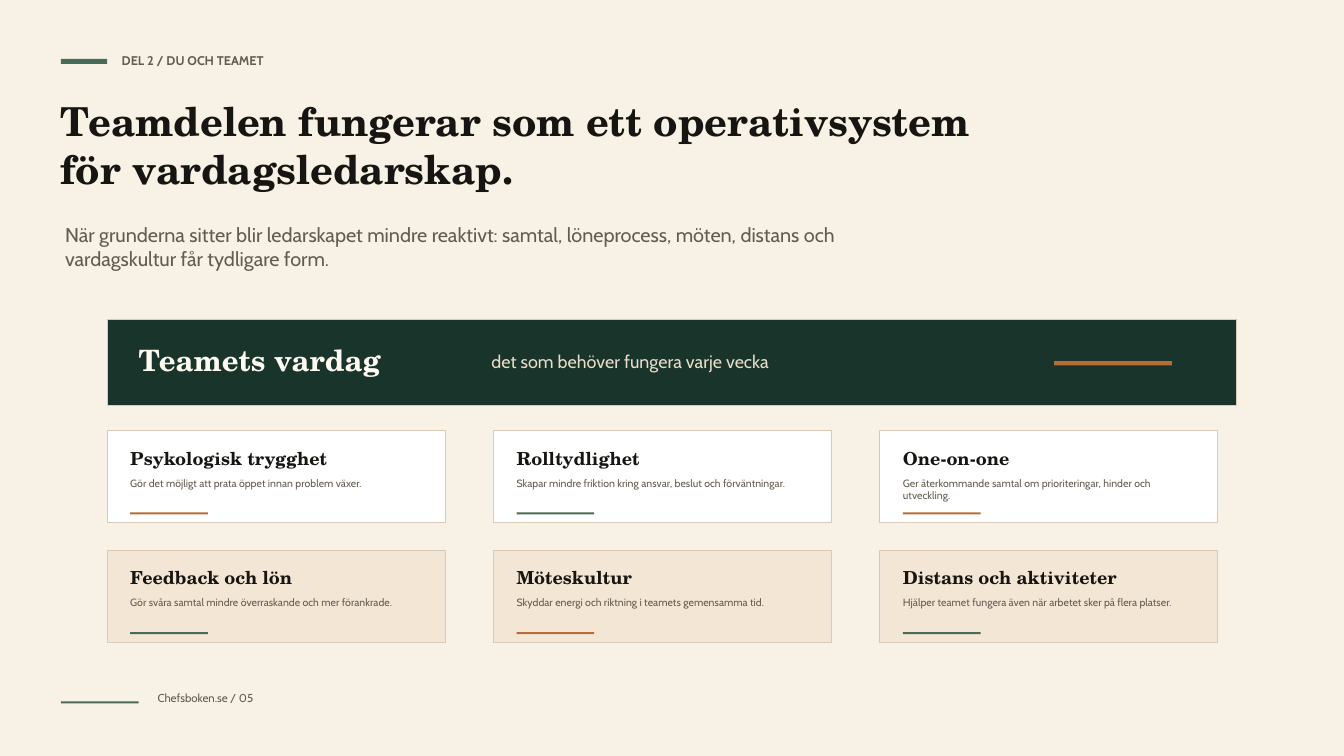
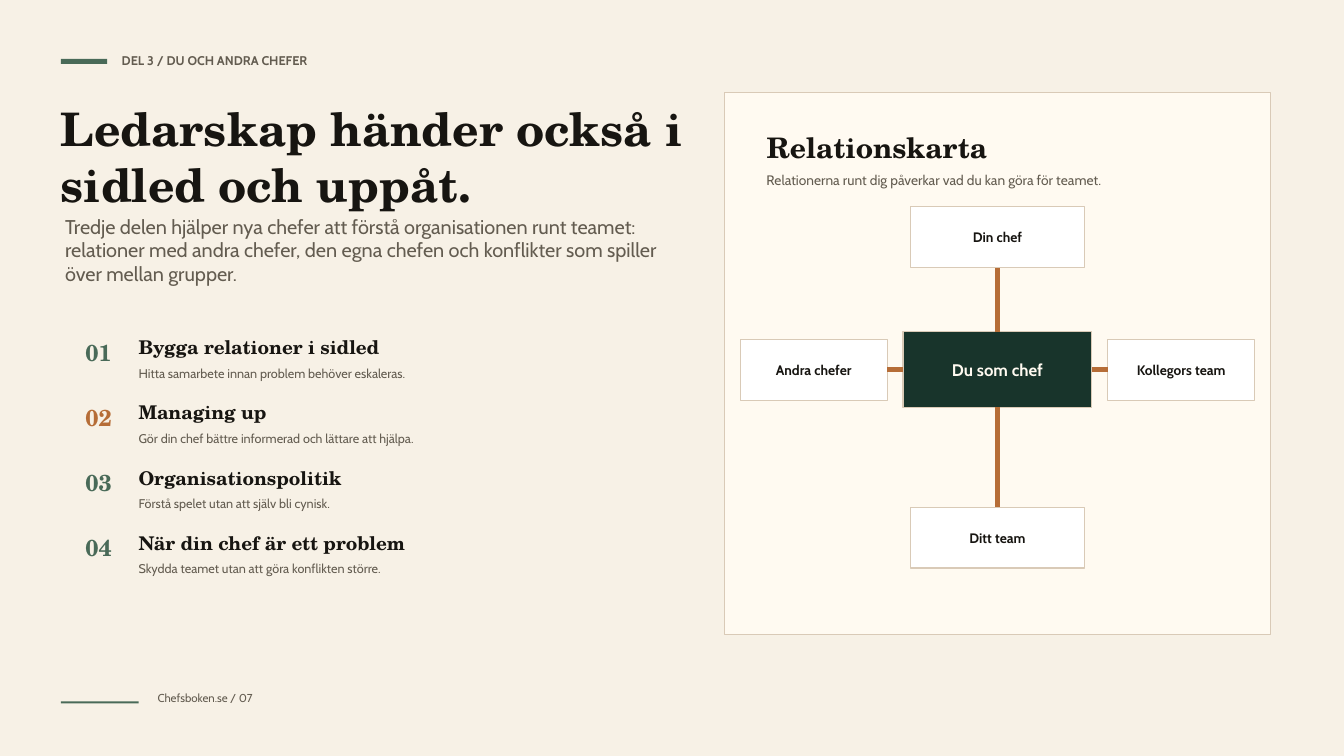
from dataclasses import dataclass

from lxml import etree
from pptx import Presentation
from pptx import slide as s
from pptx import util as u
from pptx.dml.color import RGBColor
from pptx.enum import shapes, text
from pptx.oxml import ns
from pptx.shapes import autoshape
from pptx.text import text as t

CREAM = RGBColor(0xF7, 0xF1, 0xE6)
IVORY = RGBColor(0xFF, 0xFA, 0xF1)
WHITE = RGBColor(0xFF, 0xFF, 0xFF)
SAND = RGBColor(0xF3, 0xE6, 0xD5)
LINEN = RGBColor(0xE9, 0xDC, 0xC9)
BORDER = RGBColor(0xD9, 0xCA, 0xB7)
GREEN = RGBColor(0x49, 0x6A, 0x58)
FOREST = RGBColor(0x18, 0x34, 0x2B)
COPPER = RGBColor(0xB6, 0x6D, 0x37)
INK = RGBColor(0x17, 0x15, 0x11)
MUTED = RGBColor(0x63, 0x5C, 0x50)

SERIF = "TeX Gyre Schola"
SANS = "Cabin"
COLUMNS, ROWS = 1280, 720
WIDTH, HEIGHT = u.Inches(13.33), u.Inches(7.5)
LEFT = text.PP_ALIGN.LEFT
CENTER = text.PP_ALIGN.CENTER
TOP, BOTTOM = 0, 2
WEST, EAST = 1, 3


@dataclass(frozen=True)
class Area:
    column: float
    row: float
    columns: float
    rows: float

    def moved(self, columns: float, rows: float) -> "Area":
        return Area(self.column + columns, self.row + rows, self.columns, self.rows)

    def lengths(self) -> tuple[int, int, int, int]:
        across, down = WIDTH / COLUMNS, HEIGHT / ROWS
        return (round(self.column * across), round(self.row * down),
                round(self.columns * across), round(self.rows * down))


@dataclass(frozen=True)
class Style:
    size: float
    color: RGBColor = MUTED
    font: str = SANS
    bold: bool = False


@dataclass(frozen=True)
class Header:
    section: str
    title: str
    title_size: float
    title_area: Area
    intro: str
    intro_area: Area
    number: str


@dataclass(frozen=True)
class Topic:
    heading: str
    detail: str


@dataclass(frozen=True)
class Node:
    label: str
    area: Area
    hub_side: int
    node_side: int


def heading(size: float, color: RGBColor = INK) -> Style:
    return Style(size, color, SERIF, True)


LABEL = Style(9, bold=True)
NODE_LABEL = Style(9.8, INK, bold=True)
HUB_LABEL = Style(12, IVORY, bold=True)

TEAM = Header(
    "DEL 2 / DU OCH TEAMET",
    "Teamdelen fungerar som ett operativsystem för vardagsledarskap.",
    28.5, Area(58, 92, 900, 100),
    "När grunderna sitter blir ledarskapet mindre reaktivt: samtal, löneprocess, "
    "möten, distans och vardagskultur får tydligare form.",
    Area(62, 212, 760, 54), "05")
PEERS = Header(
    "DEL 3 / DU OCH ANDRA CHEFER",
    "Ledarskap händer också i sidled och uppåt.",
    33, Area(58, 96, 720, 86),
    "Tredje delen hjälper nya chefer att förstå organisationen runt teamet: "
    "relationer med andra chefer, den egna chefen och konflikter som spiller "
    "över mellan grupper.",
    Area(62, 204, 590, 82), "07")

CARDS = (
    Topic("Psykologisk trygghet", "Gör det möjligt att prata öppet innan problem växer."),
    Topic("Rolltydlighet", "Skapar mindre friktion kring ansvar, beslut och förväntningar."),
    Topic("One-on-one", "Ger återkommande samtal om prioriteringar, hinder och utveckling."),
    Topic("Feedback och lön", "Gör svåra samtal mindre överraskande och mer förankrade."),
    Topic("Möteskultur", "Skyddar energi och riktning i teamets gemensamma tid."),
    Topic("Distans och aktiviteter", "Hjälper teamet fungera även när arbetet sker på flera platser."),
)
STEPS = (
    Topic("Bygga relationer i sidled", "Hitta samarbete innan problem behöver eskaleras."),
    Topic("Managing up", "Gör din chef bättre informerad och lättare att hjälpa."),
    Topic("Organisationspolitik", "Förstå spelet utan att själv bli cynisk."),
    Topic("När din chef är ett problem", "Skydda teamet utan att göra konflikten större."),
)
HUB = Area(860, 316, 180, 72)
NODES = (
    Node("Din chef", Area(867, 197, 166, 58), TOP, BOTTOM),
    Node("Andra chefer", Area(705, 323, 140, 58), WEST, EAST),
    Node("Kollegors team", Area(1055, 323, 140, 58), EAST, WEST),
    Node("Ditt team", Area(867, 483, 166, 58), BOTTOM, TOP),
)


def write(frame: t.TextFrame, content: str, style: Style,
          align: text.PP_ALIGN = LEFT,
          anchor: text.MSO_ANCHOR = text.MSO_ANCHOR.TOP) -> None:
    frame.margin_left = frame.margin_right = 0
    frame.margin_top = frame.margin_bottom = 0
    frame.word_wrap = True
    frame.auto_size = text.MSO_AUTO_SIZE.NONE
    frame.vertical_anchor = anchor
    para = frame.paragraphs[0]
    para.alignment = align
    span = para.add_run()
    span.text = content
    span.font.name = style.font
    span.font.size = u.Pt(style.size)
    span.font.bold = style.bold
    span.font.color.rgb = style.color


def add_text(page: s.Slide, area: Area, content: str, style: Style,
             align: text.PP_ALIGN = LEFT) -> None:
    box = page.shapes.add_textbox(*area.lengths())
    write(box.text_frame, content, style, align)


def add_block(page: s.Slide, area: Area, fill: RGBColor,
              outlined: bool = False) -> autoshape.Shape:
    block = page.shapes.add_shape(shapes.MSO_SHAPE.RECTANGLE, *area.lengths())
    block.shadow.inherit = False
    block.fill.solid()
    block.fill.fore_color.rgb = fill
    if outlined:
        block.line.color.rgb = BORDER
        block.line.width = u.Pt(0.75)
    else:
        block.line.fill.background()
    return block


def fill_placeholder(page: s.Slide, index: int, area: Area, content: str,
                     style: Style) -> None:
    holder = page.placeholders[index]
    holder.left, holder.top, holder.width, holder.height = area.lengths()
    para = holder.text_frame.paragraphs[0]
    properties = para._p.get_or_add_pPr()
    properties.set("marL", "0")
    properties.set("indent", "0")
    etree.SubElement(properties, ns.qn("a:buNone"))
    para.space_before = u.Pt(0)
    write(holder.text_frame, content, style)


def add_page(deck, header: Header) -> s.Slide:
    page = deck.slides.add_slide(deck.slide_layouts.get_by_name("Title and Content"))
    fill_placeholder(page, 0, header.title_area, header.title, heading(header.title_size))
    fill_placeholder(page, 1, header.intro_area, header.intro, Style(14.2))
    add_block(page, Area(58, 56, 44, 5), GREEN)
    add_text(page, Area(116, 50, 620, 24), header.section, LABEL)
    add_block(page, Area(58, 668, 74, 2), GREEN)
    add_text(page, Area(150, 658, 320, 22), f"Chefsboken.se / {header.number}", Style(8.2))
    return page


def add_card(page: s.Slide, index: int, card: Topic) -> None:
    row, column = divmod(index, 3)
    area = Area(102, 410, 322, 88).moved(368 * column, 114 * row)
    add_block(page, area, SAND if row else WHITE, outlined=True)
    corner = (area.column, area.row)
    add_text(page, Area(22, 16, 278, 24).moved(*corner), card.heading, heading(12.8))
    add_text(page, Area(22, 44, 274, 30).moved(*corner), card.detail, Style(7.5))
    add_block(page, Area(22, 78, 74, 2).moved(*corner), GREEN if index % 2 else COPPER)


def add_step(page: s.Slide, index: int, step: Topic) -> None:
    down = 62 * index
    color = COPPER if index == 1 else GREEN
    add_text(page, Area(72, 322, 44, 30).moved(0, down), f"{index + 1:02}",
             heading(16.5, color), CENTER)
    add_text(page, Area(132, 320, 300, 24).moved(0, down), step.heading, heading(13.5))
    add_text(page, Area(132, 348, 430, 22).moved(0, down), step.detail, Style(9))


def add_node(page: s.Slide, area: Area, label: str, fill: RGBColor,
             style: Style) -> autoshape.Shape:
    node = add_block(page, area, fill, outlined=True)
    write(node.text_frame, label, style, CENTER, text.MSO_ANCHOR.MIDDLE)
    return node


def add_link(page: s.Slide, hub: autoshape.Shape, hub_side: int,
             node: autoshape.Shape, node_side: int) -> None:
    link = page.shapes.add_connector(shapes.MSO_CONNECTOR.STRAIGHT, 0, 0, 0, 0)
    link.begin_connect(hub, hub_side)
    link.end_connect(node, node_side)
    link.line.color.rgb = COPPER
    link.line.width = u.Pt(3)
    etree.SubElement(link._element.spPr, ns.qn("a:effectLst"))


def add_team_page(deck) -> None:
    page = add_page(deck, TEAM)
    add_block(page, Area(102, 304, 1076, 82), FOREST, outlined=True)
    add_text(page, Area(132, 326, 316, 34), "Teamets vardag", heading(21, IVORY))
    add_text(page, Area(468, 334, 350, 24), "det som behöver fungera varje vecka",
             Style(12.8, LINEN))
    add_block(page, Area(1004, 344, 112, 4), COPPER)
    for index, card in enumerate(CARDS):
        add_card(page, index, card)


def add_peers_page(deck) -> None:
    page = add_page(deck, PEERS)
    for index, step in enumerate(STEPS):
        add_step(page, index, step)
    add_block(page, Area(690, 88, 520, 516), IVORY, outlined=True)
    add_text(page, Area(730, 124, 250, 32), "Relationskarta", heading(20.2))
    add_text(page, Area(730, 164, 324, 34),
             "Relationerna runt dig påverkar vad du kan göra för teamet.", Style(9.8))
    hub = add_node(page, HUB, "Du som chef", FOREST, HUB_LABEL)
    for item in NODES:
        node = add_node(page, item.area, item.label, WHITE, NODE_LABEL)
        add_link(page, hub, item.hub_side, node, item.node_side)


def main() -> None:
    deck = Presentation()
    deck.slide_width, deck.slide_height = WIDTH, HEIGHT
    background = deck.slide_master.background.fill
    background.solid()
    background.fore_color.rgb = CREAM
    add_team_page(deck)
    add_peers_page(deck)
    deck.save("out.pptx")


if __name__ == "__main__":
    main()
